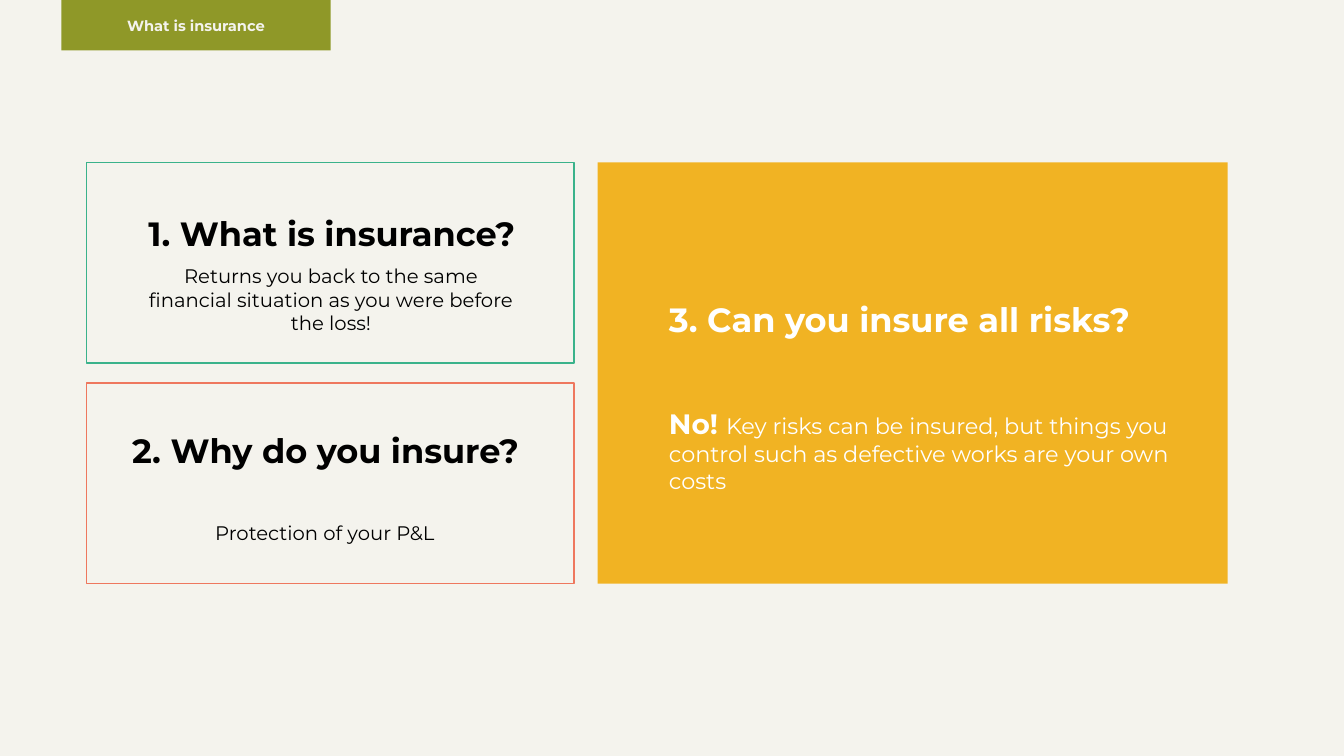
import pptx
import pptx.util
import pptx.dml.color
import pptx.enum.shapes
import pptx.enum.text
import pptx.oxml.ns
import lxml.etree

Cm = pptx.util.Cm
Pt = pptx.util.Pt
RGBColor = pptx.dml.color.RGBColor
SHAPE = pptx.enum.shapes.MSO_SHAPE
ALIGN = pptx.enum.text.PP_ALIGN

CREAM = RGBColor(0xF4, 0xF3, 0xED)
AMBER = RGBColor(0xF1, 0xB3, 0x23)
OLIVE = RGBColor(0x8A, 0x94, 0x1E)
GREEN = RGBColor(0x3A, 0xB2, 0x8B)
CORAL = RGBColor(0xEE, 0x77, 0x5E)
BLACK = RGBColor(0, 0, 0)
WHITE = RGBColor(0xFF, 0xFF, 0xFF)
FONT = "Montserrat"

deck = pptx.Presentation()
deck.slide_width, deck.slide_height = Cm(33.87), Cm(19.05)
slide = deck.slides.add_slide(deck.slide_layouts[6])
slide.background.fill.solid()
slide.background.fill.fore_color.rgb = CREAM


def add_panel(kind, left, top, width, height, fill=None, line=None):
    panel = slide.shapes.add_shape(kind, Cm(left), Cm(top), Cm(width), Cm(height))
    panel.shadow.inherit = False
    if fill is None:
        panel.fill.background()
    else:
        panel.fill.solid()
        panel.fill.fore_color.rgb = fill
    if line is None:
        panel.line.fill.background()
    else:
        panel.line.color.rgb = line
        panel.line.width = Pt(1)
    return panel


def write(paragraph, text, size, color, bold, align):
    paragraph.text = text
    paragraph.alignment = align
    paragraph.font.name = FONT
    paragraph.font.size = Pt(size)
    paragraph.font.bold = bold
    paragraph.font.color.rgb = color


add_panel(SHAPE.RECTANGLE, 15.06, 4.09, 15.88, 10.62, fill=AMBER)

section_tab = add_panel(SHAPE.ROUNDED_RECTANGLE, 1.55, 0, 6.78, 1.27, fill=OLIVE)
section_tab.adjustments[0] = 0
tab_color = section_tab.fill._xPr.find(".//" + pptx.oxml.ns.qn("a:srgbClr"))
lxml.etree.SubElement(tab_color, pptx.oxml.ns.qn("a:alpha"), val="95000")
section_tab.text_frame.vertical_anchor = pptx.enum.text.MSO_ANCHOR.MIDDLE
write(section_tab.text_frame.paragraphs[0], "What is insurance", 10.5, CREAM, True, ALIGN.CENTER)

texts = [
    ("1. What is insurance?", 2.57, 5.23, 11.58, 1.27, 24, BLACK, True, ALIGN.CENTER),
    ("Returns you back to the same financial situation as you were before the loss!",
     3.48, 6.53, 9.73, 1.45, 14, BLACK, False, ALIGN.CENTER),
    ("2. Why do you insure?", 2.59, 10.72, 11.23, 1.27, 24, BLACK, True, ALIGN.CENTER),
    ("Protection of your P&L", 4.9, 13, 6.58, 0.86, 14, BLACK, False, ALIGN.CENTER),
    ("3. Can you insure all risks?", 16.61, 7.42, 13.06, 1.27, 24, WHITE, True, ALIGN.LEFT),
    ("No! ", 16.61, 10.13, 13.28, 1.8, 16, WHITE, False, ALIGN.LEFT),
]
for text, left, top, width, height, size, color, bold, align in texts:
    box = slide.shapes.add_textbox(Cm(left), Cm(top), Cm(width), Cm(height))
    box.text_frame.word_wrap = True
    write(box.text_frame.paragraphs[0], text, size, color, bold, align)

answer = box.text_frame.paragraphs[0]
answer.runs[0].font.size = Pt(20)
answer.runs[0].font.bold = True
answer.add_run().text = ("Key risks can be insured, but things you control "
                         "such as defective works are your own costs")

for row, outline in enumerate([GREEN, CORAL]):
    add_panel(SHAPE.RECTANGLE, 2.18, 4.09 + row * 5.56, 12.29, 5.06, line=outline)

deck.save("out.pptx")
